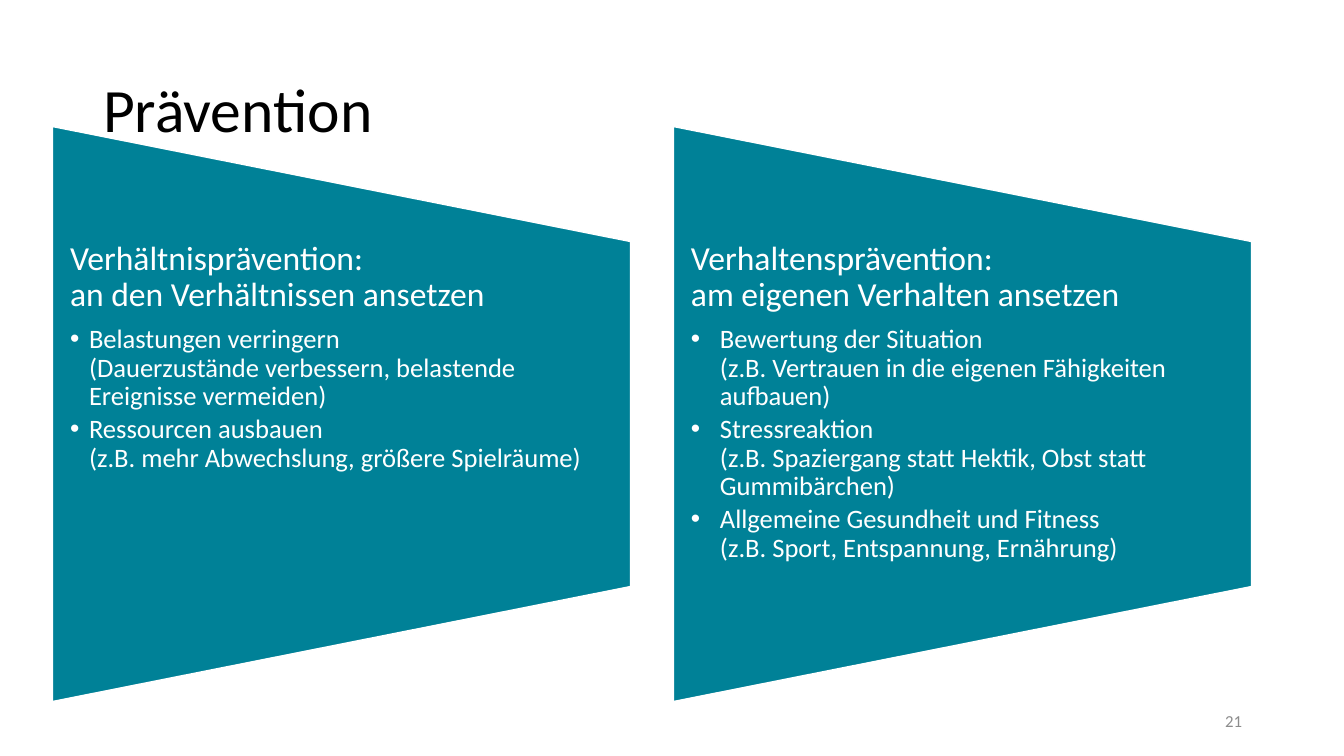
"""Build the slide on the two approaches to prevention."""
from lxml import etree
from pptx import Presentation, util as u
from pptx.dml.color import RGBColor
from pptx.enum import shapes, text
from pptx.oxml.ns import qn

COLORS = {"teal": "008197", "white": "FFFFFF", "black": "000000", "gray": "8C8C8C"}
FONT = "Calibri"
PANELS = [
    (54, 19, "Verhältnisprävention:\van den Verhältnissen ansetzen", [
        "Belastungen verringern\v(Dauerzustände verbessern, belastende Ereignisse vermeiden)",
        "Ressourcen ausbauen\v(z.B. mehr Abwechslung, größere Spielräume)",
    ]),
    (675, 29, "Verhaltensprävention:\vam eigenen Verhalten ansetzen", [
        "Bewertung der Situation\v(z.B. Vertrauen in die eigenen Fähigkeiten aufbauen)",
        "Stressreaktion\v(z.B. Spaziergang statt Hektik, Obst statt Gummibärchen)",
        "Allgemeine Gesundheit und Fitness\v(z.B. Sport, Entspannung, Ernährung)",
    ]),
]


def px(n):
    return u.Emu(round(n * 914400 / 100.8))


def rgb(name):
    return RGBColor.from_string(COLORS[name])


def write(p, content, size, color, after=0, spacing=0.9):
    p.text = content
    p.line_spacing = spacing
    p.space_before = u.Pt(0)
    p.space_after = u.Pt(after)
    for r in p.runs:
        r.font.size = u.Pt(size)
        r.font.name = FONT
        r.font.color.rgb = rgb(color)


def add_bullet(p, indent):
    pPr = p._p.get_or_add_pPr()
    pPr.set("marL", str(px(indent)))
    pPr.set("indent", str(-px(indent)))
    etree.SubElement(pPr, qn("a:buFont")).set("typeface", "Arial")
    etree.SubElement(pPr, qn("a:buChar")).set("char", "•")


def add_title(s, content):
    sp = s.shapes.title
    sp.left, sp.top, sp.width, sp.height = px(93), px(40), px(1159), px(146)
    tf = sp.text_frame
    tf.vertical_anchor = text.MSO_ANCHOR.MIDDLE
    write(tf.paragraphs[0], content, 44, "black")
    tf.paragraphs[0].alignment = text.PP_ALIGN.LEFT


def add_textbox(s, left, top, width, height):
    tf = s.shapes.add_textbox(px(left), px(top), px(width), px(height)).text_frame
    tf.word_wrap = True
    return tf


def add_panel(s, left, indent, heading, points):
    sp = s.shapes.add_shape(shapes.MSO_SHAPE.FLOWCHART_MANUAL_OPERATION,
                            px(left), px(125), px(575), px(578))
    sp.rotation = 270
    sp.shadow.inherit = False
    sp.fill.solid()
    sp.fill.fore_color.rgb = rgb("teal")
    sp.line.color.rgb = rgb("white")
    sp.line.width = u.Pt(1)

    tf = add_textbox(s, left - 1, 241, 578, 345)
    tf.margin_left = tf.margin_right = px(17)
    tf.margin_top = tf.margin_bottom = 0
    write(tf.paragraphs[0], heading, 24, "white", after=8.4)
    for point in points:
        p = tf.add_paragraph()
        write(p, point, 19, "white", after=2.85)
        p.level = 1
        add_bullet(p, indent)


def add_slide_number(s, number):
    tf = add_textbox(s, 950, 701, 302, 40)
    tf.vertical_anchor = text.MSO_ANCHOR.MIDDLE
    write(tf.paragraphs[0], number, 12, "gray", spacing=1.0)
    tf.paragraphs[0].alignment = text.PP_ALIGN.RIGHT


def main():
    prs = Presentation()
    prs.slide_width, prs.slide_height = px(1344), px(756)
    s = prs.slides.add_slide(prs.slide_layouts[5])
    add_title(s, "Prävention")
    add_slide_number(s, "21")
    for panel in PANELS:
        add_panel(s, *panel)
    prs.save("out.pptx")


if __name__ == "__main__":
    main()
